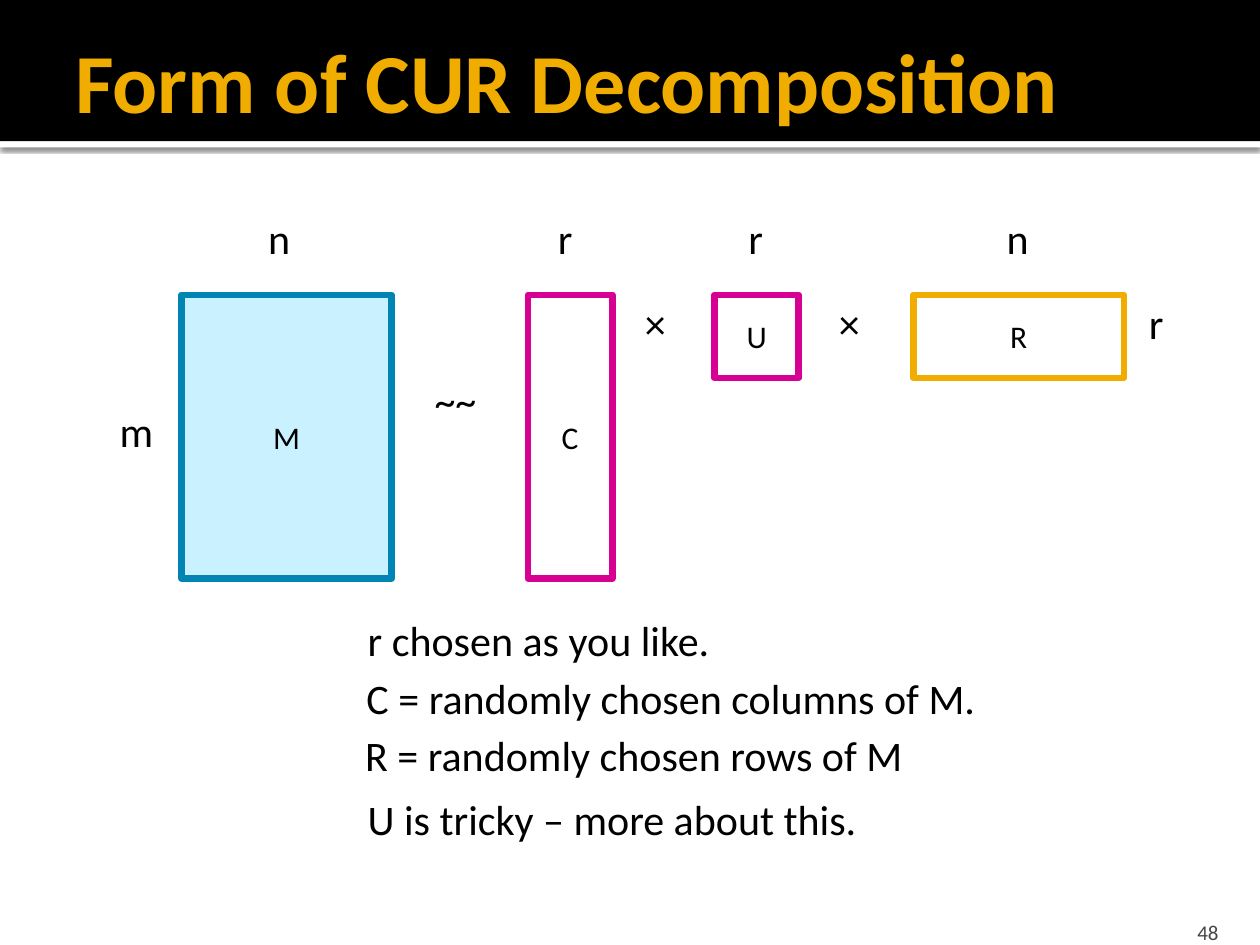
from lxml import etree
from pptx import Presentation
from pptx.dml.color import RGBColor
from pptx.enum.shapes import MSO_SHAPE as Shape
from pptx.enum.text import MSO_ANCHOR as Anchor, MSO_AUTO_SIZE as AutoSize, PP_ALIGN as Align
from pptx.oxml import parse_xml
from pptx.oxml.ns import nsdecls
from pptx.util import Pt

SCALE = 9144  # EMU per px, 100 px to the inch
BLACK = RGBColor(0x00, 0x00, 0x00)
WHITE = RGBColor(0xFF, 0xFF, 0xFF)
GOLD = RGBColor(0xF0, 0xAD, 0x00)
GREY = RGBColor(0x45, 0x45, 0x45)
SKY = RGBColor(0xC9, 0xF1, 0xFF)
BLUE = RGBColor(0x00, 0x84, 0xB4)
MAGENTA = RGBColor(0xD6, 0x00, 0x93)


def px(*lengths):
    return [length * SCALE for length in lengths]


class SlideWriter:
    font_name = "Calibri"

    def __init__(self, page):
        self.page = page

    def style(self, para, size, color, align=Align.LEFT, bold=False):
        para.alignment = align
        para.font.name = self.font_name
        para.font.size = Pt(size)
        para.font.color.rgb = color
        para.font.bold = bold

    def band(self, top, height, color):
        box = self.page.shapes.add_shape(Shape.RECTANGLE, *px(0, top, 1000, height))
        box.shadow.inherit = False
        box.fill.solid()
        box.fill.fore_color.rgb = color
        box.line.fill.background()
        return box

    def drop_shadow(self, box):
        effects = box._element.spPr.find("{*}effectLst")
        effects.append(parse_xml(
            f'<a:outerShdw {nsdecls("a")} blurRad="{Pt(2.5)}" dist="{Pt(0.8)}" '
            'dir="5400000" algn="t" rotWithShape="0"><a:srgbClr val="000000">'
            '<a:alpha val="60000"/></a:srgbClr></a:outerShdw>'))

    def matrix(self, name, left, width, height, fill, line):
        box = self.page.shapes.add_shape(Shape.RECTANGLE, *px(left, 234, width, height))
        box.shadow.inherit = False
        box.fill.solid()
        box.fill.fore_color.rgb = fill
        box.line.color.rgb = line
        box.line.width = Pt(3.78)
        frame = box.text_frame
        frame.text = name
        frame.vertical_anchor = Anchor.MIDDLE
        self.style(frame.paragraphs[0], 18, BLACK, Align.CENTER)

    def label(self, text, left, top, width):
        frame = self.page.shapes.add_textbox(*px(left, top, width, 50)).text_frame
        frame.word_wrap = False
        frame.auto_size = AutoSize.SHAPE_TO_FIT_TEXT
        frame.text = text
        self.style(frame.paragraphs[0], 24, BLACK)

    def fixed_text(self, text, place, anchor, right, bottom, size, color, **look):
        frame = self.page.shapes.add_textbox(*px(*place)).text_frame
        frame.word_wrap = True
        frame.vertical_anchor = anchor
        frame.margin_right, frame.margin_bottom = px(right, bottom)
        frame.text = text
        self.style(frame.paragraphs[0], size, color, **look)


def main():
    deck = Presentation()
    deck.slide_width, deck.slide_height = px(1000, 750)
    writer = SlideWriter(deck.slides.add_slide(deck.slide_layouts[6]))

    # Title band, white rule with its shadow, and page number
    writer.drop_shadow(writer.band(112, 5, WHITE))
    writer.band(0, 112, BLACK)
    writer.fixed_text("Form of CUR Decomposition", (50, 17, 950, 92), Anchor.MIDDLE,
                      5, 5, 48, GOLD, bold=True)
    writer.fixed_text("48", (897, 720, 80, 30), Anchor.BOTTOM,
                      10, 0, 12, GREY, align=Align.RIGHT)

    # Matrices: n is 167 wide, m is 225 high, r is 67 by 66
    for matrix in (
        ("M", 144, 167, 225, SKY, BLUE),
        ("C", 419, 67, 225, WHITE, MAGENTA),
        ("U", 567, 67, 66, WHITE, MAGENTA),
        ("R", 725, 167, 66, WHITE, GOLD),
    ):
        writer.matrix(*matrix)

    # Dimensions above the matrices
    for text, left, width in (("n", 203, 38), ("r", 433, 31), ("r", 584, 31), ("n", 789, 38)):
        writer.label(text, left, 164, width)

    # Dimensions and operators beside the matrices
    writer.label("m", 85, 317, 48)
    writer.label("~~", 335, 292, 55)
    for text, left, width in (("×", 502, 39), ("×", 656, 39), ("r", 902, 31)):
        writer.label(text, left, 231, width)

    # Explanations
    for text, left, top, width in (
        ("r chosen as you like.", 282, 483, 304),
        ("C = randomly chosen columns of M.", 281, 529, 511),
        ("R = randomly chosen rows of M", 280, 574, 452),
        ("U is tricky – more about this.", 282, 625, 414),
    ):
        writer.label(text, left, top, width)

    deck.save("out.pptx")


if __name__ == "__main__":
    main()
